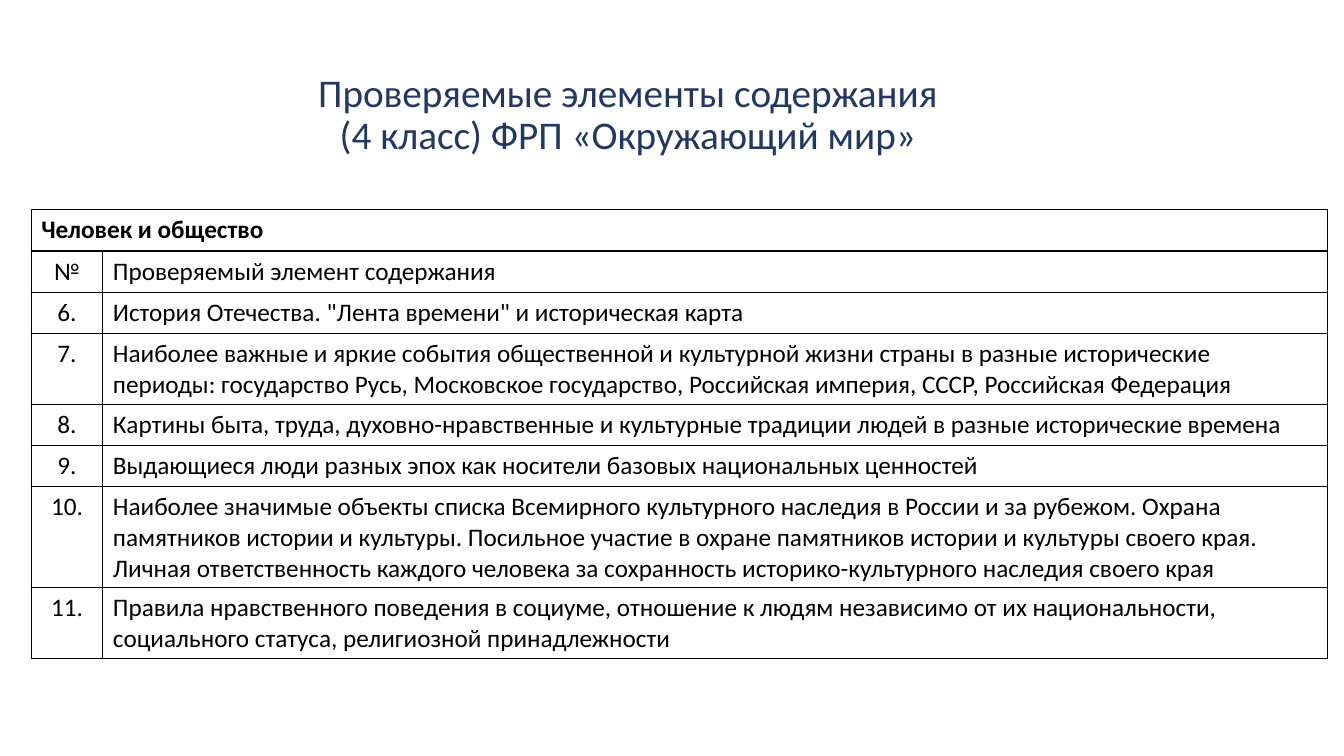
"""Build a slide with a table of tested content elements for grade 4."""
from lxml.etree import SubElement
from pptx import Presentation
from pptx.dml.color import RGBColor
from pptx.enum.text import MSO_ANCHOR, PP_ALIGN
from pptx.oxml.ns import qn
from pptx.util import Inches, Pt

NAVY = RGBColor(0x20, 0x38, 0x64)
BLACK = RGBColor(0, 0, 0)
FONT = "Calibri"

ROWS = [
    ("Человек и общество", ""),
    ("№", "Проверяемый элемент содержания"),
    ("6.", "История Отечества. \"Лента времени\" и историческая карта"),
    ("7.", "Наиболее важные и яркие события общественной и культурной жизни страны "
           "в разные исторические периоды: государство Русь, Московское государство, "
           "Российская империя, СССР, Российская Федерация"),
    ("8.", "Картины быта, труда, духовно-нравственные и культурные традиции людей "
           "в разные исторические времена"),
    ("9.", "Выдающиеся люди разных эпох как носители базовых национальных ценностей"),
    ("10.", "Наиболее значимые объекты списка Всемирного культурного наследия в России "
            "и за рубежом. Охрана памятников истории и культуры. Посильное участие "
            "в охране памятников истории и культуры своего края. Личная ответственность "
            "каждого человека за сохранность историко-культурного наследия своего края"),
    ("11.", "Правила нравственного поведения в социуме, отношение к людям независимо "
            "от их национальности, социального статуса, религиозной принадлежности"),
]


def style_text(paragraph, size, color, bold=False):
    for span in paragraph.runs:
        span.font.name = FONT
        span.font.size = Pt(size)
        span.font.color.rgb = color
        span.font.bold = bold


def add_borders(cell):
    properties = cell._tc.get_or_add_tcPr()
    for side in ("a:lnL", "a:lnR", "a:lnT", "a:lnB"):
        line = SubElement(properties, qn(side), w=str(Pt(1)))
        fill = SubElement(line, qn("a:solidFill"))
        SubElement(fill, qn("a:srgbClr"), val=str(BLACK))


deck = Presentation()
deck.slide_width = Inches(13.33)
deck.slide_height = Inches(7.5)
page = deck.slides.add_slide(deck.slide_layouts[6])

title = page.shapes.add_textbox(Inches(0.52), Inches(0.62), Inches(11.5), Inches(1.06))
title_frame = title.text_frame
title_frame.word_wrap = True
title_frame.vertical_anchor = MSO_ANCHOR.MIDDLE
heading = title_frame.paragraphs[0]
heading.text = "Проверяемые элементы содержания \v(4 класс) ФРП «Окружающий мир» "
heading.alignment = PP_ALIGN.CENTER
heading.line_spacing = 0.9
style_text(heading, 28, NAVY)

table = page.shapes.add_table(
    len(ROWS), 2, Inches(0.31), Inches(2.08), Inches(12.86), Inches(0.41 * len(ROWS))
).table
table.first_row = False
table.horz_banding = False
table.columns[0].width = Inches(0.71)
table.columns[1].width = Inches(12.15)
table.cell(0, 0).merge(table.cell(0, 1))

for row_index, texts in enumerate(ROWS):
    for column_index, text in enumerate(texts):
        cell = table.cell(row_index, column_index)
        add_borders(cell)
        cell.fill.background()
        para = cell.text_frame.paragraphs[0]
        para.text = text
        is_number = row_index > 0 and column_index == 0
        para.alignment = PP_ALIGN.CENTER if is_number else PP_ALIGN.LEFT
        style_text(para, 18, BLACK, bold=row_index == 0)

deck.save("out.pptx")
